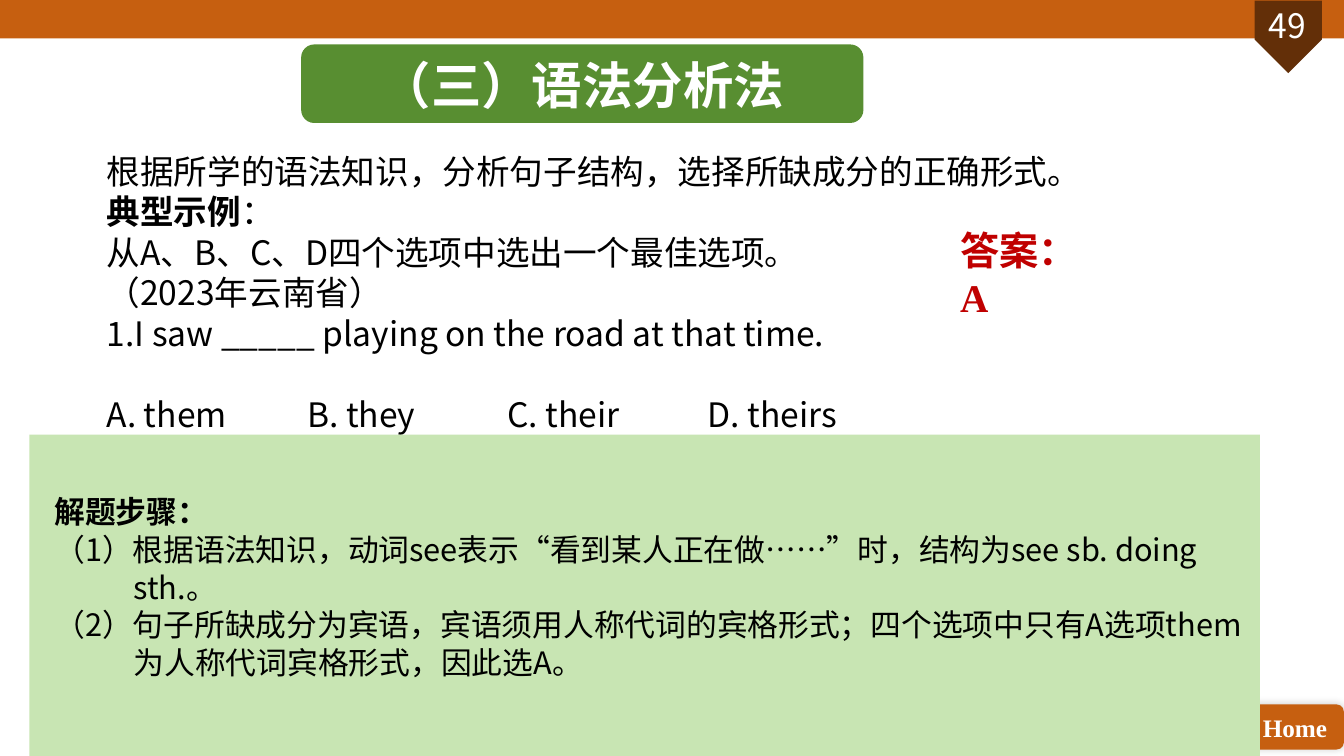
from lxml import etree
from pptx import Presentation
from pptx.dml.color import RGBColor
from pptx.enum.shapes import MSO_SHAPE
from pptx.enum.text import MSO_ANCHOR, PP_ALIGN
from pptx.oxml.ns import qn
from pptx.util import Cm, Pt

RECTANGLE = MSO_SHAPE.RECTANGLE
ROUNDED = MSO_SHAPE.ROUNDED_RECTANGLE
PENTAGON = MSO_SHAPE.PENTAGON
LEFT, CENTER = PP_ALIGN.LEFT, PP_ALIGN.CENTER
TOP, MIDDLE = MSO_ANCHOR.TOP, MSO_ANCHOR.MIDDLE

SANS, SERIF, TITLE_FONT = "Noto Sans CJK SC", "Times New Roman", "Calibri"
ORANGE, BROWN, GREEN, PALE_GREEN = "C65F10", "632F08", "588E31", "C8E5B3"
WHITE, BLACK, RED = "FFFFFF", "000000", "C00000"

OPTION_STEP = 5.05

QUESTION = [
    [("根据所学的语法知识，分析句子结构，选择所缺成分的正确形式。", False)],
    [("典型示例", True), ("：", False)],
    [("从A、B、C、D四个选项中选出一个最佳选项。", False)],
    [("（2023年云南省）", False)],
    [("1.I saw _____ playing on the road at that time.", False)],
]
OPTIONS = ["A. them", "B. they", "C. their", "D. theirs"]
STEPS = [
    [("解题步骤：", True)],
    [("（1）根据语法知识，动词see表示“看到某人正在做……”时，结构为see sb. doing sth.。", False)],
    [("（2）句子所缺成分为宾语，宾语须用人称代词的宾格形式；四个选项中只有A选项"
      "them为人称代词宾格形式，因此选A。", False)],
]


def color(hex_code):
    """Turn a hex string into a colour."""
    return RGBColor.from_string(hex_code)


def add_block(slide, preset, box, fill, rotation=0):
    """Add a plain filled shape without outline."""
    shape = slide.shapes.add_shape(preset, *map(Cm, box))
    shape.shadow.inherit = False
    shape.fill.solid()
    shape.fill.fore_color.rgb = color(fill)
    shape.line.fill.background()
    shape.rotation = rotation
    return shape


def add_text_box(slide, box):
    """Add an empty text box."""
    return slide.shapes.add_textbox(*map(Cm, box))


def write(shape, paragraphs, size, font, ink, align=LEFT, anchor=TOP):
    """Fill a shape with paragraphs of (text, bold) runs and return the paragraphs."""
    frame = shape.text_frame
    frame.word_wrap = True
    frame.vertical_anchor = anchor
    for index, runs in enumerate(paragraphs):
        paragraph = frame.add_paragraph() if index else frame.paragraphs[0]
        paragraph.alignment = align
        paragraph.line_spacing = Pt(round(size * 1.21))
        for text, bold in runs:
            run = paragraph.add_run()
            run.text = text
            run.font.size = Pt(size)
            run.font.bold = bold
            run.font.name = font
            run.font.color.rgb = color(ink)
            east_asian = etree.SubElement(run.font._element, qn("a:ea"))
            east_asian.set("typeface", SANS)
    return frame.paragraphs


def set_tabs(paragraph, step, count):
    """Set evenly spaced left tab stops."""
    tabs = etree.SubElement(paragraph._p.get_or_add_pPr(), qn("a:tabLst"))
    for number in range(1, count + 1):
        etree.SubElement(tabs, qn("a:tab"), pos=str(Cm(step * number)), algn="l")


def set_hanging(paragraph, indent):
    """Give a paragraph a hanging indent."""
    properties = paragraph._p.get_or_add_pPr()
    properties.set("marL", str(Cm(indent)))
    properties.set("indent", str(-Cm(indent)))


def add_soft_shadow(shape):
    """Give a shape a faint blurred shadow."""
    effects = shape._element.spPr.find(qn("a:effectLst"))
    shadow = etree.SubElement(effects, qn("a:outerShdw"), blurRad=str(Pt(6)),
                              dist="0", dir="18900000", rotWithShape="0")
    shade = etree.SubElement(shadow, qn("a:srgbClr"), val=BLACK)
    etree.SubElement(shade, qn("a:alpha"), val="20000")


def add_page_frame(slide):
    """Add the top band, the page number flag and the home button."""
    add_block(slide, RECTANGLE, (0, 0, 33.87, 0.97), ORANGE)
    add_block(slide, PENTAGON, (31.55, 0.08, 1.83, 1.7), BROWN, 90)
    number = add_text_box(slide, (31.2, 0, 2.5, 1.27))
    write(number, [[("49", False)]], 24, SANS, WHITE, CENTER)
    home = add_block(slide, ROUNDED, (31.4, 17.75, 2.47, 1.14), ORANGE)
    add_soft_shadow(home)
    write(home, [[("Home", True)]], 18, SERIF, WHITE, CENTER, MIDDLE)


def add_question(slide):
    """Add the question, its tabbed options and the answer."""
    box = add_text_box(slide, (2.44, 3.66, 29.92, 7.44))
    options = [("\t".join(OPTIONS), False)]
    paragraphs = write(box, QUESTION + [options], 24, SANS, BLACK)
    paragraphs[-1].space_before = Pt(29)
    set_tabs(paragraphs[-1], OPTION_STEP, len(OPTIONS) - 1)
    answer = add_text_box(slide, (23.95, 5.56, 3.6, 2.9))
    write(answer, [[("答案：A", True)]], 28, SERIF, RED)


def add_steps(slide):
    """Add the solving steps on their green panel."""
    add_block(slide, RECTANGLE, (0.74, 10.95, 31.01, 8.1), PALE_GREEN)
    box = add_text_box(slide, (1.12, 12.27, 30.63, 4.95))
    for paragraph in write(box, STEPS, 22, SANS, BLACK):
        set_hanging(paragraph, 2)


def main():
    """Build and save the slide."""
    presentation = Presentation()
    presentation.slide_width, presentation.slide_height = Cm(33.87), Cm(19.05)
    slide = presentation.slides.add_slide(presentation.slide_layouts[6])
    add_page_frame(slide)
    title = add_block(slide, ROUNDED, (7.59, 1.12, 14.17, 1.98), GREEN)
    write(title, [[("（三）语法分析法", True)]], 36, TITLE_FONT, WHITE, CENTER, MIDDLE)
    add_question(slide)
    add_steps(slide)
    presentation.save("out.pptx")


if __name__ == "__main__":
    main()
